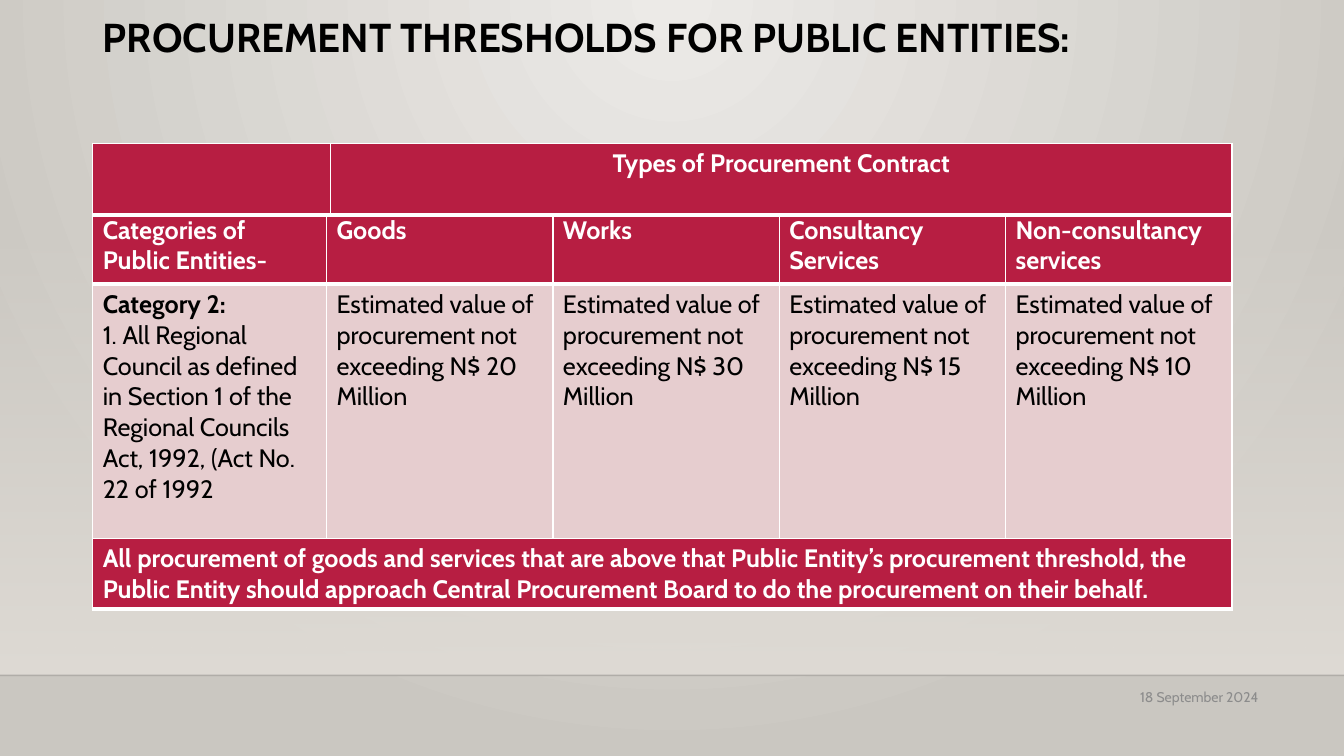
from dataclasses import dataclass

from lxml.etree import SubElement
from pptx import Presentation
from pptx.dml.color import RGBColor
from pptx.enum.shapes import MSO_CONNECTOR as Connector, MSO_SHAPE as Shape
from pptx.enum.text import MSO_ANCHOR as Anchor, MSO_AUTO_SIZE as AutoSize, PP_ALIGN as Align
from pptx.oxml import parse_xml
from pptx.oxml.ns import nsdecls, qn
from pptx.util import Inches, Pt


@dataclass(frozen=True)
class Theme:
    font: str = "Cabin"
    accent: str = "B71E42"
    tint: str = "E6CDCF"
    ink: str = "000000"
    paper: str = "FFFFFF"
    muted: str = "8C8C8C"
    glow: str = "ECEAE7"
    edge: str = "CAC7C1"
    haze: str = "DFDBD5"
    title_size: float = 28.8
    table_size: float = 18
    date_size: float = 10


THEME = Theme()


def write(frame, *lines, size, color, bold=False, align=Align.LEFT, spacing=None):
    """Fill a frame with paragraphs; a line is text or a (text, bold) pair."""
    frame.word_wrap = True
    for index, line in enumerate(lines):
        text, heavy = line if isinstance(line, tuple) else (line, bold)
        para = frame.paragraphs[0] if index == 0 else frame.add_paragraph()
        para.alignment = align
        para.line_spacing = spacing
        span = para.add_run()
        span.text = text
        span.font.name = THEME.font
        span.font.size = Pt(size)
        span.font.bold = heavy
        span.font.color.rgb = RGBColor.from_string(color)


def set_stops(fill, *colors):
    fill.gradient()
    for stop, color in zip(fill.gradient_stops, colors):
        stop.color.rgb = RGBColor.from_string(color)


def set_opacity(color_node, percent):
    SubElement(color_node, qn("a:alpha")).set("val", str(percent * 1000))


class SlideBuilder:
    """Places elements by percentages of the slide's width and height."""

    def __init__(self, deck):
        self.deck = deck
        self.page = deck.slides.add_slide(deck.slide_layouts[5])

    def across(self, share):
        return round(self.deck.slide_width * share / 100)

    def down(self, share):
        return round(self.deck.slide_height * share / 100)

    def area(self, left, top, width, height):
        return self.across(left), self.down(top), self.across(width), self.down(height)

    def background(self):
        fill = self.page.background.fill
        set_stops(fill, THEME.glow, THEME.edge)
        linear = next(self.page.element.iter(qn("a:lin")))
        radial = parse_xml(
            f'<a:path {nsdecls("a")} path="circle">'
            '<a:fillToRect l="43000" t="0" r="43000" b="100000"/></a:path>')
        linear.getparent().replace(linear, radial)

    def haze(self, *area):
        box = self.page.shapes.add_shape(Shape.RECTANGLE, *self.area(*area))
        box.shadow.inherit = False
        box.line.fill.background()
        set_stops(box.fill, THEME.haze, THEME.haze)
        box.fill.gradient_angle = 270
        set_opacity(next(box.element.spPr.iter(qn("a:srgbClr"))), 0)

    def rule(self, top):
        line = self.page.shapes.add_connector(
            Connector.STRAIGHT, 0, self.down(top), self.across(100), self.down(top))
        line.line.width = Pt(1)
        line.line.color.rgb = RGBColor.from_string(THEME.ink)
        properties = line.element.spPr
        set_opacity(next(properties.iter(qn("a:srgbClr"))), 20)
        SubElement(properties, qn("a:effectLst"))

    def title(self, text, *area):
        box = self.page.shapes.title
        box.left, box.top, box.width, box.height = self.area(*area)
        frame = box.text_frame
        frame.auto_size = AutoSize.NONE
        frame.vertical_anchor = Anchor.TOP
        write(frame, text, size=THEME.title_size, color=THEME.ink, bold=True, spacing=0.9)

    def label(self, text, *area):
        frame = self.page.shapes.add_textbox(*self.area(*area)).text_frame
        frame.vertical_anchor = Anchor.MIDDLE
        write(frame, text, size=THEME.date_size, color=THEME.muted, align=Align.RIGHT)

    def table(self, left, top, columns, rows):
        area = self.area(left, top, sum(columns), sum(rows))
        grid = self.page.shapes.add_table(len(rows), len(columns), *area).table
        grid.first_row = grid.horz_banding = False
        for column, share in zip(grid.columns, columns):
            column.width = self.across(share)
        for row, share in zip(grid.rows, rows):
            row.height = self.down(share)
        return grid

    def cell(self, cell, *lines, heading=True, align=Align.LEFT, top=None):
        cell.fill.solid()
        cell.fill.fore_color.rgb = RGBColor.from_string(THEME.accent if heading else THEME.tint)
        if top is not None:
            cell.margin_top = self.down(top)
        write(cell.text_frame, *lines, size=THEME.table_size, bold=heading, align=align,
              color=THEME.paper if heading else THEME.ink)
        # Cell borders, heavier below headings
        weights = {"lnL": 1, "lnR": 1, "lnT": 1, "lnB": 3 if heading else 1}
        properties = cell._tc.get_or_add_tcPr()
        for index, (side, weight) in enumerate(weights.items()):
            properties.insert(index, parse_xml(
                f'<a:{side} {nsdecls("a")} w="{Pt(weight)}"><a:solidFill>'
                f'<a:srgbClr val="{THEME.paper}"/></a:solidFill></a:{side}>'))


TABLE_LEFT, TABLE_WIDTH = 6.9, 84.77
CATEGORY_WIDTH = 17.4
THRESHOLDS = {
    "Goods": 20,
    "Works": 30,
    "Consultancy Services": 15,
    "Non-consultancy services": 10,
}


def main():
    deck = Presentation()
    deck.slide_width, deck.slide_height = Inches(13.33), Inches(7.5)
    slide = SlideBuilder(deck)

    # Backdrop
    slide.background()
    slide.haze(0, 29.47, 100, 59.87)
    slide.rule(89.33)

    # Title and date
    slide.title("PROCUREMENT THRESHOLDS FOR PUBLIC ENTITIES:", TABLE_LEFT, 1.73, 85.67, 9.87)
    slide.label("18 September 2024", 65.64, 89.87, 28.73, 4.53)

    # Thresholds by contract type; the top margin clears the heading strip
    contract_width = (TABLE_WIDTH - CATEGORY_WIDTH) / len(THRESHOLDS)
    columns = [CATEGORY_WIDTH] + [contract_width] * len(THRESHOLDS)
    thresholds = slide.table(TABLE_LEFT, 23.73, columns, [13.87, 34.67])
    slide.cell(thresholds.cell(0, 0), "Categories of Public Entities-", top=4.67)
    slide.cell(
        thresholds.cell(1, 0), ("Category 2:", True),
        "1. All Regional Council as defined in Section 1 of the Regional Councils Act, "
        "1992, (Act No. 22 of 1992", heading=False)
    for column, (contract, millions) in enumerate(THRESHOLDS.items(), start=1):
        slide.cell(thresholds.cell(0, column), contract, top=4.67)
        slide.cell(
            thresholds.cell(1, column),
            f"Estimated value of procurement not exceeding N$ {millions} Million", heading=False)

    # Heading strip
    strip = slide.table(TABLE_LEFT, 18.93, [17.7, TABLE_WIDTH - 17.7], [9.47])
    slide.cell(strip.cell(0, 0))
    slide.cell(strip.cell(0, 1), "Types of Procurement Contract", align=Align.CENTER)

    # Closing rule on larger procurements
    closing = slide.table(TABLE_LEFT, 71.2, [TABLE_WIDTH], [9.33])
    slide.cell(
        closing.cell(0, 0),
        "All procurement of goods and services that are above that Public Entity’s "
        "procurement threshold, the Public Entity should approach Central Procurement "
        "Board to do the procurement on their behalf.")

    deck.save("out.pptx")


if __name__ == "__main__":
    main()
